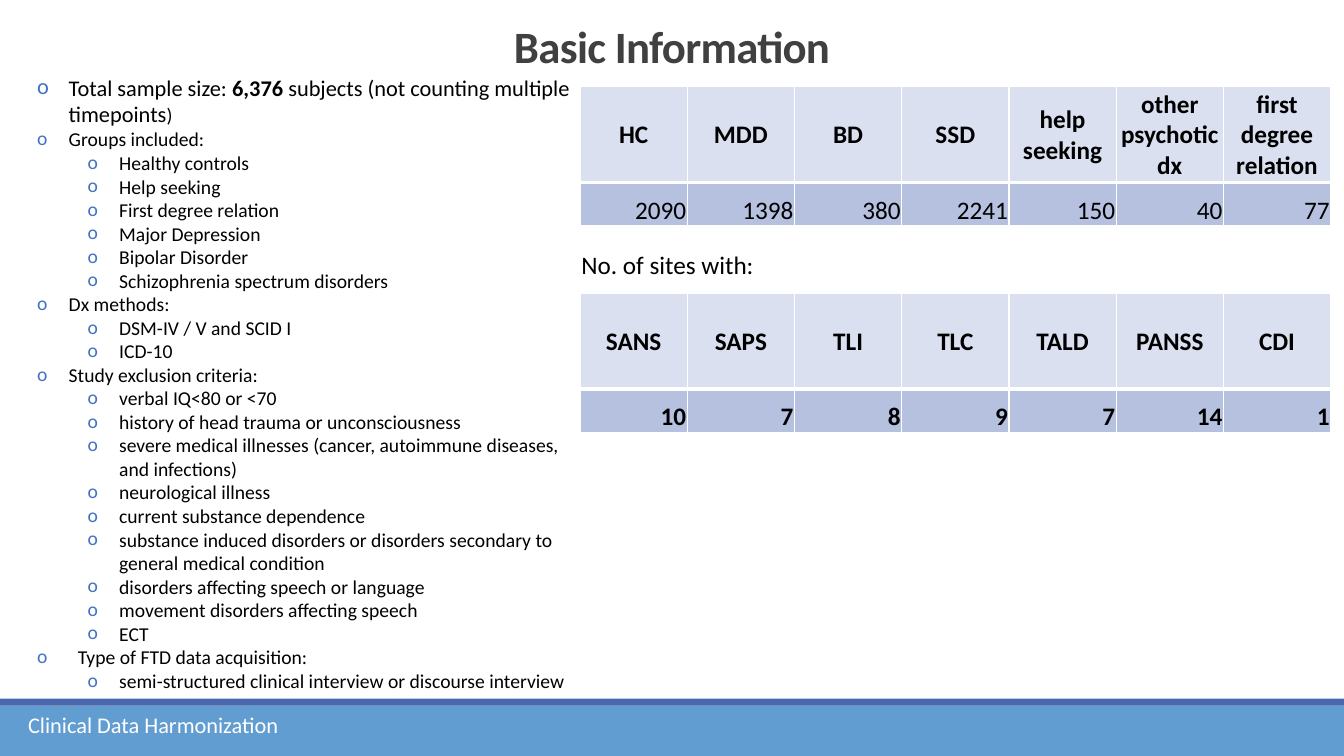
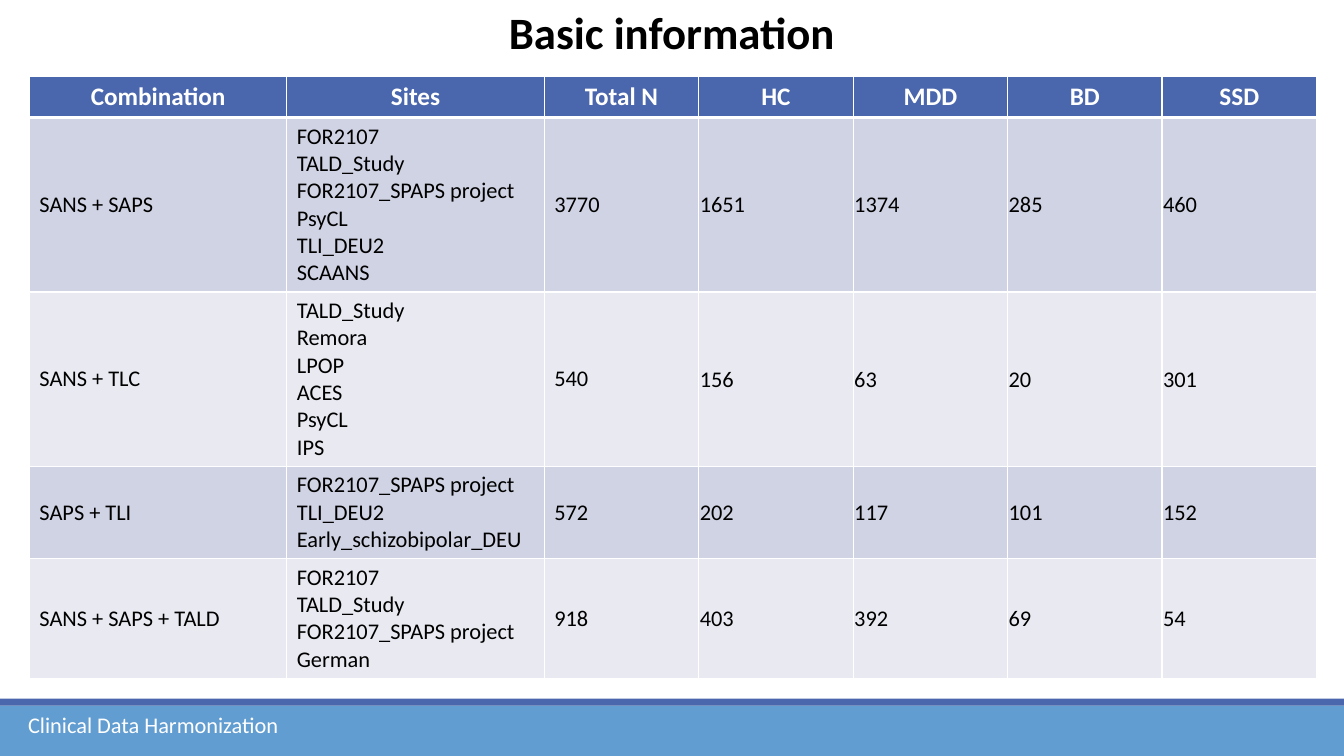
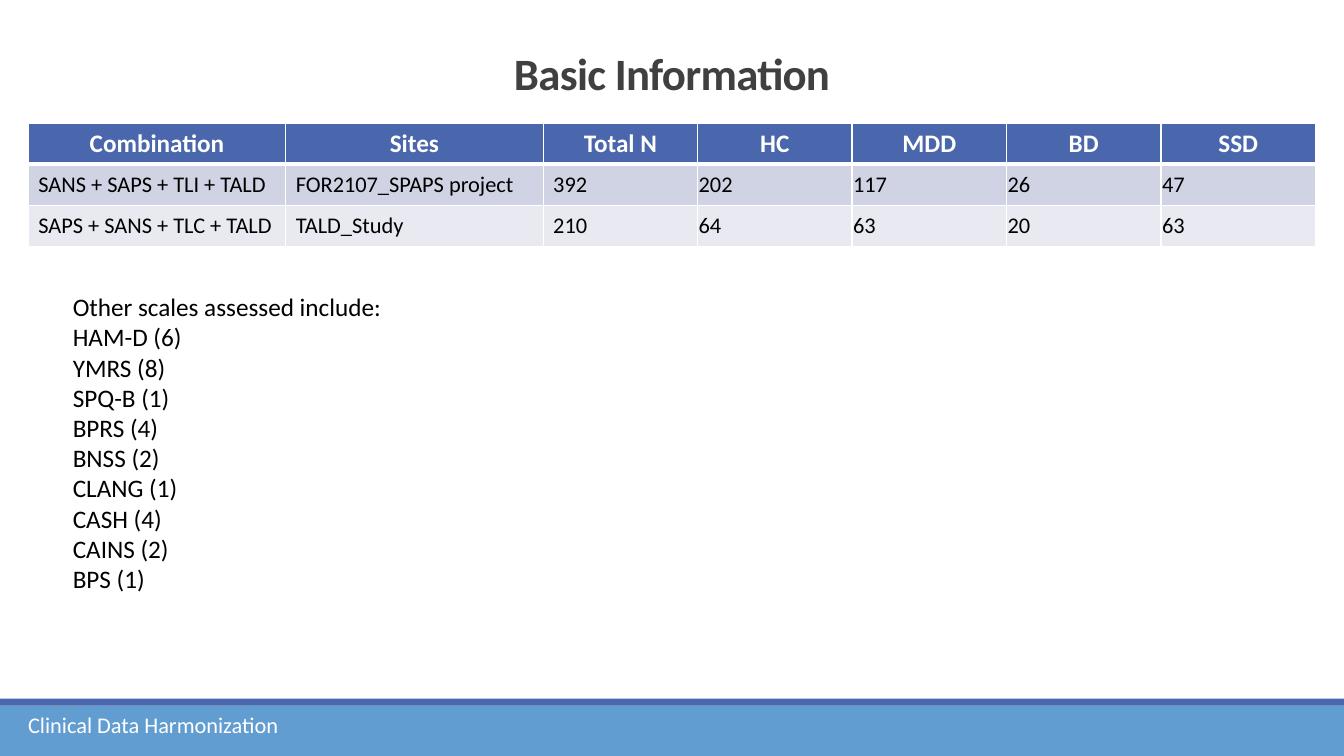
from dataclasses import dataclass
from typing import Optional

from lxml.etree import SubElement
from pptx import Presentation
from pptx.dml.color import RGBColor
from pptx.enum.shapes import MSO_SHAPE as Preset
from pptx.enum.text import MSO_ANCHOR as Anchor, MSO_AUTO_SIZE as AutoSize, PP_ALIGN as Align
from pptx.oxml.ns import qn
from pptx.util import Pt

COLORS = {
    "black": "000000",
    "white": "FFFFFF",
    "title": "404040",
    "bullet": "4472C4",
    "band": "629DD1",
    "accent": "4A66AC",
    "count_head": "DAE0EF",
    "count_body": "B5C1DF",
    "stripe_dark": "D0D3E3",
    "stripe_light": "E9EAF1",
}
FONT = "Calibri"
WIDTH, HEIGHT = 960, 540
TITLE_AND_BODY, TITLE_ONLY = 1, 5
INDENT, LEVEL_STEP = 22.5, 36
LINE_HEIGHT, ROW_PADDING, ROW_MINIMUM = 19.5, 5.5, 29.3
ROOMY, TIGHT = (7.2, 3.6, 7.2, 3.6), (0.75, 0.75, 0.75, 0)
COMBINATION_HEAD = ["Combination", "Sites", "Total N", "HC", "MDD", "BD", "SSD"]


@dataclass(frozen=True)
class Frame:
    left: float
    top: float
    width: float
    height: float

    def lengths(self) -> tuple:
        return Pt(self.left), Pt(self.top), Pt(self.width), Pt(self.height)


@dataclass(frozen=True)
class Band:
    frame: Frame
    color: str


@dataclass(frozen=True)
class Topic:
    text: str
    details: tuple = ()
    extra_indent: float = 0


@dataclass(frozen=True)
class CellStyle:
    fill: str
    size: float = 18
    color: str = "black"
    bold: bool = False
    align: Align = Align.LEFT
    anchor: Anchor = Anchor.MIDDLE
    margins: tuple = ROOMY
    top_line: float = 1
    bottom_line: float = 1


@dataclass(frozen=True)
class Combination:
    name: str
    sites: tuple
    counts: tuple


BANDS = [
    Band(Frame(0, 504, WIDTH, 36), "band"),
    Band(Frame(0, 499, WIDTH, 5), "accent"),
]
TOPICS = [
    Topic("Groups included:", (
        "Healthy controls", "Help seeking", "First degree relation", "Major Depression",
        "Bipolar Disorder", "Schizophrenia spectrum disorders")),
    Topic("Dx methods:", ("DSM-IV / V and SCID I", "ICD-10")),
    Topic("Study exclusion criteria:", (
        "verbal IQ<80 or <70",
        "history of head trauma or unconsciousness",
        "severe medical illnesses (cancer, autoimmune diseases, and infections)",
        "neurological illness",
        "current substance dependence",
        "substance induced disorders or disorders secondary to general medical condition",
        "disorders affecting speech or language",
        "movement disorders affecting speech",
        "ECT")),
    Topic("Type of FTD data acquisition:",
          ("semi-structured clinical interview or discourse interview",), 6.5),
]
PAIRS = [
    Combination("SANS + SAPS",
                ("FOR2107", "TALD_Study", "FOR2107_SPAPS project", "PsyCL", "TLI_DEU2", "SCAANS"),
                (3770, 1651, 1374, 285, 460)),
    Combination("SANS + TLC", ("TALD_Study", "Remora", "LPOP", "ACES", "PsyCL", "IPS"),
                (540, 156, 63, 20, 301)),
    Combination("SAPS + TLI", ("FOR2107_SPAPS project", "TLI_DEU2", "Early_schizobipolar_DEU"),
                (572, 202, 117, 101, 152)),
    Combination("SANS + SAPS + TALD", ("FOR2107", "TALD_Study", "FOR2107_SPAPS project", "German"),
                (918, 403, 392, 69, 54)),
]
QUADS = [
    Combination("SANS + SAPS + TLI + TALD", ("FOR2107_SPAPS project",), (392, 202, 117, 26, 47)),
    Combination("SAPS + SANS + TLC + TALD", ("TALD_Study",), (210, 64, 63, 20, 63)),
]
SCALES = [
    "Other scales assessed include:", "HAM-D (6)", "YMRS (8)", "SPQ-B (1)", "BPRS (4)",
    "BNSS (2)", "CLANG (1)", "CASH (4)", "CAINS (2)", "BPS (1)",
]


def rgb(name: str) -> RGBColor:
    return RGBColor.from_string(COLORS[name])


def add_span(para, text: str, *, size: float = 18, color: str = "black",
             bold: bool = False, tracking: Optional[float] = None) -> None:
    span = para.add_run()
    span.text = text
    span.font.name = FONT
    span.font.size = Pt(size)
    span.font.bold = bold
    span.font.color.rgb = rgb(color)
    if tracking is not None:
        span._r.get_or_add_rPr().set("spc", str(round(tracking * 100)))


def next_para(frame, *, align: Align = Align.LEFT, spacing: float = 1):
    first = frame.paragraphs[0]
    para = frame.add_paragraph() if first.runs else first
    para.alignment = align
    para.line_spacing = spacing
    para.space_before = para.space_after = Pt(0)
    return para


def set_bullet(para, *, character: str = "", margin: float = 0, hanging: float = 0) -> None:
    properties = para._p.get_or_add_pPr()
    properties.set("marL", str(Pt(margin)))
    properties.set("indent", str(Pt(-hanging)))
    if not character:
        SubElement(properties, qn("a:buNone"))
        return
    color = SubElement(properties, qn("a:buClr"))
    SubElement(color, qn("a:srgbClr"), val=COLORS["bullet"])
    SubElement(properties, qn("a:buFont"), typeface=FONT)
    SubElement(properties, qn("a:buChar"), char=character)


def prepare(box, place: Frame, *, anchor: Anchor = Anchor.TOP):
    box.left, box.top, box.width, box.height = place.lengths()
    frame = box.text_frame
    frame.word_wrap = True
    frame.auto_size = AutoSize.NONE
    frame.vertical_anchor = anchor
    return frame


def add_label(page, place: Frame, text: str, **style) -> None:
    frame = prepare(page.shapes.add_textbox(*place.lengths()), place)
    add_span(next_para(frame), text, **style)


def add_page(deck, layout: int, title: str, title_height: float, *,
             anchor: Anchor = Anchor.BOTTOM, spacing: float = 0.85, **style):
    page = deck.slides.add_slide(deck.slide_layouts[layout])
    frame = prepare(page.shapes.title, Frame(0, 0, WIDTH, title_height), anchor=anchor)
    add_span(next_para(frame, align=Align.CENTER, spacing=spacing), title,
             size=32, bold=True, **style)
    add_label(page, Frame(13, 504.7, 529, 29), "Clinical Data Harmonization",
              size=16, color="white")
    return page


def add_master_bands(deck, page) -> None:
    for index, band in enumerate(BANDS):
        shape = page.shapes.add_shape(Preset.RECTANGLE, *band.frame.lengths())
        shape.shadow.inherit = False
        shape.fill.solid()
        shape.fill.fore_color.rgb = rgb(band.color)
        shape.line.fill.background()
        next(shape.element.iter(qn("p:cNvPr"))).set("id", str(100 + index))
        deck.slide_master.shapes.element.insert(2 + index, shape.element)


def fill_cell(cell, lines: tuple, style: CellStyle) -> None:
    properties = cell._tc.get_or_add_tcPr()
    edges = {"lnL": 1, "lnR": 1, "lnT": style.top_line, "lnB": style.bottom_line}
    for edge, width in edges.items():
        line = SubElement(properties, qn(f"a:{edge}"), w=str(Pt(width)))
        SubElement(SubElement(line, qn("a:solidFill")), qn("a:srgbClr"), val=COLORS["white"])
    cell.fill.solid()
    cell.fill.fore_color.rgb = rgb(style.fill)
    cell.vertical_anchor = style.anchor
    cell.margin_left, cell.margin_top, cell.margin_right, cell.margin_bottom = map(Pt, style.margins)
    for text in lines:
        add_span(next_para(cell.text_frame, align=style.align), text,
                 size=style.size, color=style.color, bold=style.bold)


def add_grid(page, left: float, top: float, widths: list, heights: list):
    place = Frame(left, top, sum(widths), sum(heights))
    table = page.shapes.add_table(len(heights), len(widths), *place.lengths()).table
    table.horz_banding = False
    for column, width in zip(table.columns, widths):
        column.width = Pt(width)
    for row, height in zip(table.rows, heights):
        row.height = Pt(height)
    return table


def add_count_table(page, top: float, counts: dict, *, bold: bool = False) -> None:
    head = CellStyle("count_head", bold=True, align=Align.CENTER, margins=TIGHT, bottom_line=3)
    body = CellStyle("count_body", bold=bold, align=Align.RIGHT, anchor=Anchor.BOTTOM,
                     margins=TIGHT, top_line=3)
    table = add_grid(page, 414.3, top, [76.6] * len(counts), [68.4, 31])
    for column, (name, count) in enumerate(counts.items()):
        fill_cell(table.cell(0, column), (name,), head)
        fill_cell(table.cell(1, column), (str(count),), body)


def add_combination_table(page, left: float, top: float, rows: list) -> None:
    heights = [ROW_MINIMUM] + [
        max(ROW_MINIMUM, len(row.sites) * LINE_HEIGHT + ROW_PADDING) for row in rows]
    table = add_grid(page, left, top, [183.9] * 2 + [110.34] * 5, heights)
    head = CellStyle("accent", color="white", bold=True, align=Align.CENTER,
                     anchor=Anchor.TOP, bottom_line=3)
    for column, name in enumerate(COMBINATION_HEAD):
        fill_cell(table.cell(0, column), (name,), head)
    for number, row in enumerate(rows, 1):
        values = [(row.name,), row.sites] + [(str(count),) for count in row.counts]
        for column, lines in enumerate(values):
            style = CellStyle("stripe_dark" if number % 2 else "stripe_light", size=16,
                              margins=ROOMY if column < 3 else TIGHT,
                              top_line=3 if number == 1 else 1)
            fill_cell(table.cell(number, column), lines, style)


def add_topics(page) -> None:
    frame = prepare(page.placeholders[1], Frame(19.4, 49, 397, 453))
    para = next_para(frame)
    set_bullet(para, character="o", margin=INDENT, hanging=INDENT)
    add_span(para, "Total sample size: ", size=16)
    add_span(para, "6,376 ", size=16, bold=True)
    add_span(para, "subjects (not counting multiple timepoints", size=16)
    add_span(para, ")", size=14)
    for topic in TOPICS:
        para = next_para(frame)
        margin = INDENT + topic.extra_indent
        set_bullet(para, character="o", margin=margin, hanging=margin)
        add_span(para, topic.text, size=14)
        for detail in topic.details:
            para = next_para(frame)
            para.level = 1
            set_bullet(para, character="o", margin=INDENT + LEVEL_STEP, hanging=INDENT)
            add_span(para, detail, size=14)


def add_scales(page) -> None:
    frame = prepare(page.placeholders[1], Frame(44.8, 204.5, 404.6, 247))
    for scale in SCALES:
        para = next_para(frame)
        set_bullet(para)
        add_span(para, scale)


def main() -> None:
    deck = Presentation()
    deck.slide_width, deck.slide_height = Pt(WIDTH), Pt(HEIGHT)

    page = add_page(deck, TITLE_AND_BODY, "Basic Information", 55.5, color="title", tracking=-0.5)
    add_master_bands(deck, page)
    add_topics(page)
    add_count_table(page, 62, {
        "HC": 2090, "MDD": 1398, "BD": 380, "SSD": 2241, "help seeking": 150,
        "other psychotic dx": 40, "first degree relation": 77})
    add_label(page, Frame(408.2, 174.3, 551, 51), "No. of sites with:")
    add_count_table(page, 209.5, {
        "SANS": 10, "SAPS": 7, "TLI": 8, "TLC": 9, "TALD": 7, "PANSS": 14, "CDI": 1}, bold=True)

    page = add_page(deck, TITLE_ONLY, "Basic information", 46, anchor=Anchor.TOP, spacing=1)
    add_combination_table(page, 21, 54.7, PAIRS)

    page = add_page(deck, TITLE_AND_BODY, "Basic Information", 75, color="title", tracking=-0.5)
    add_combination_table(page, 20.2, 88, QUADS)
    add_scales(page)

    deck.save("out.pptx")


if __name__ == "__main__":
    main()
